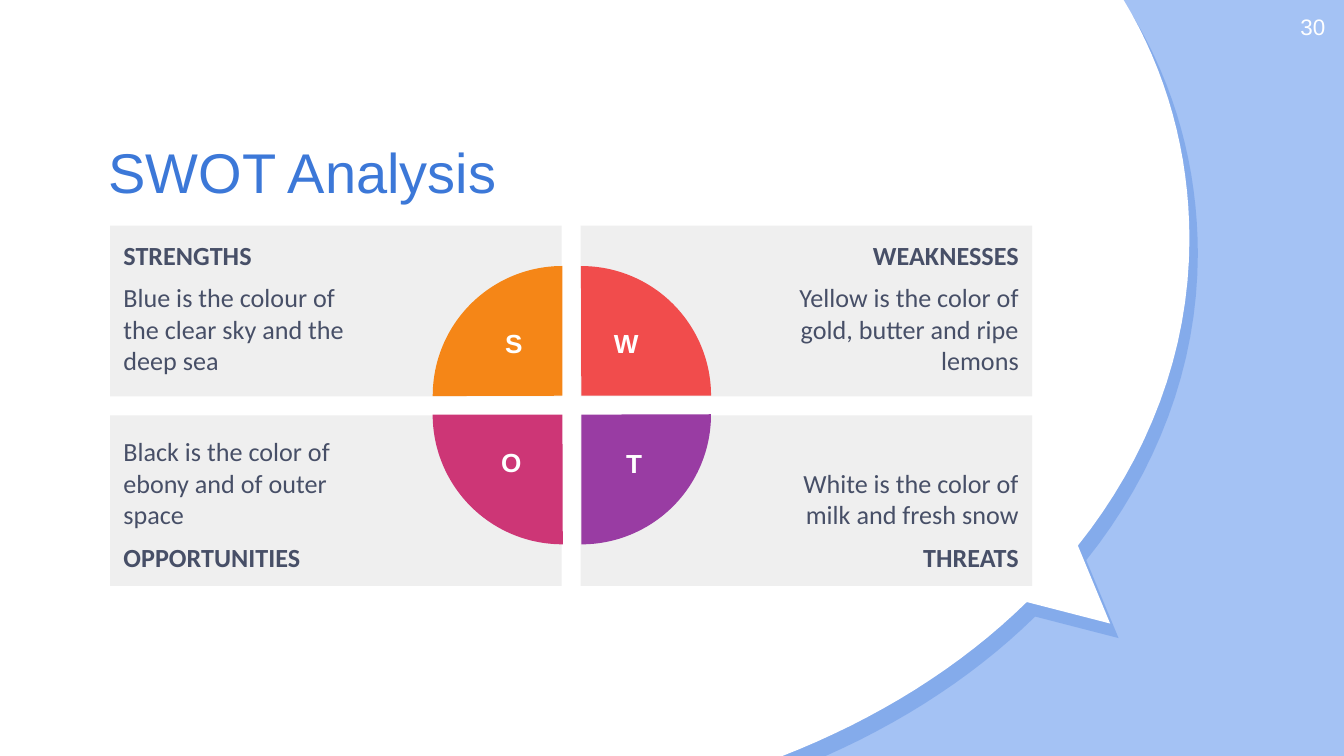
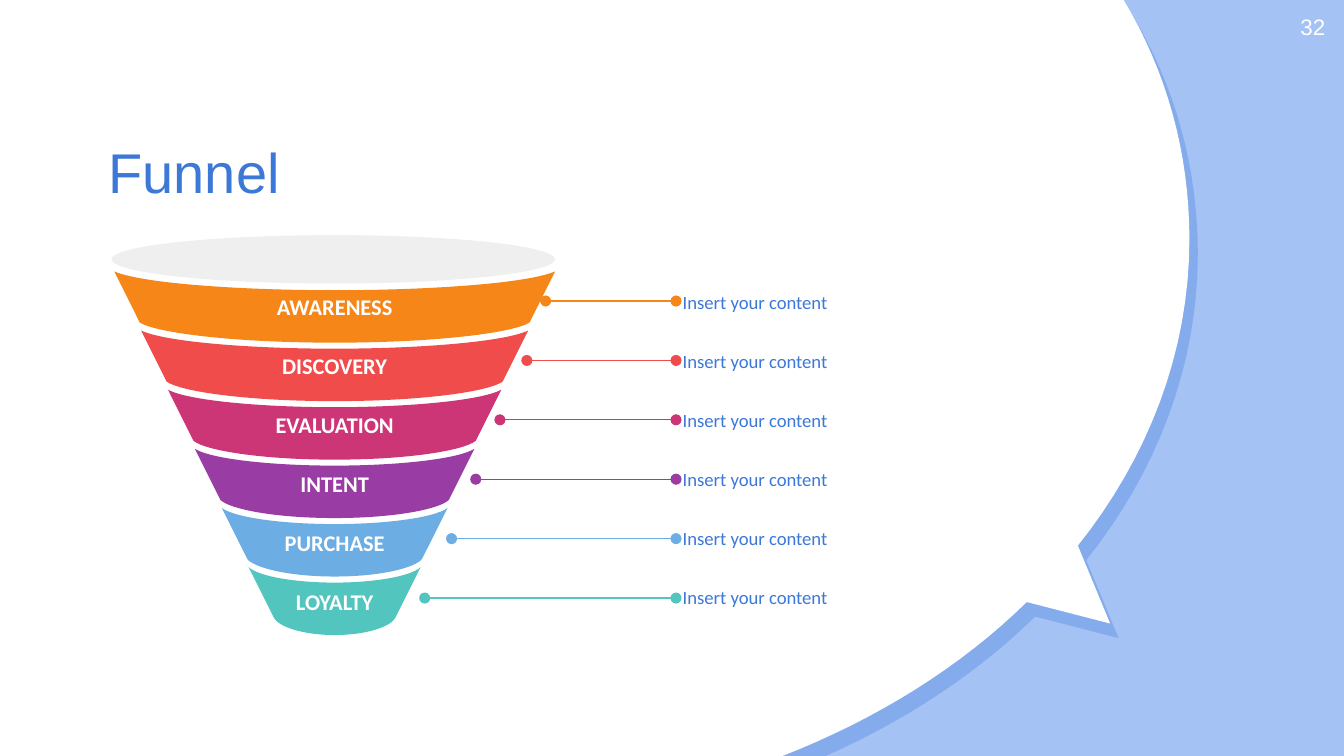
from lxml import etree
from pptx import Presentation
from pptx.dml.color import RGBColor
from pptx.enum.shapes import MSO_CONNECTOR, MSO_SHAPE
from pptx.enum.text import MSO_ANCHOR, PP_ALIGN
from pptx.oxml.ns import qn
from pptx.util import Inches, Pt

LEFT, CENTER, RIGHT = PP_ALIGN.LEFT, PP_ALIGN.CENTER, PP_ALIGN.RIGHT
TOP, MIDDLE, BOTTOM = MSO_ANCHOR.TOP, MSO_ANCHOR.MIDDLE, MSO_ANCHOR.BOTTOM
RECTANGLE, ELLIPSE, PIE = MSO_SHAPE.RECTANGLE, MSO_SHAPE.OVAL, MSO_SHAPE.PIE
STRAIGHT = MSO_CONNECTOR.STRAIGHT

COLORS = {
    "sky": "A4C2F4", "blue": "3C78D8", "white": "FFFFFF", "panel": "EFEFEF",
    "ink": "474F67", "orange": "F58617", "red": "F14C4C", "pink": "CD3676",
    "purple": "993CA3", "light blue": "6CAEE3", "teal": "52C5BF",
}
HEADING_FONT, BODY_FONT = "Arial", "Calibri"

# Content: heading, text, letter, colour, column, row, pie turn, letter box (left, top, width)
SWOT = [
    ("STRENGTHS", "Blue is the colour of the clear sky and the deep sea",
     "S", "orange", 0, 0, 0, (3.66, 2.39, 0.26)),
    ("WEAKNESSES", "Yellow is the color of gold, butter and ripe lemons",
     "W", "red", 1, 0, 90, (4.47, 2.39, 0.37)),
    ("OPPORTUNITIES", "Black is the color of ebony and of outer space",
     "O", "pink", 0, 1, 270, (3.63, 3.27, 0.32)),
    ("THREATS", "White is the color of milk and fresh snow",
     "T", "purple", 1, 1, 180, (4.56, 3.28, 0.26)),
]
# Stage, colour, start of its leader line
FUNNEL = [
    ("AWARENESS", "orange", 4.06), ("DISCOVERY", "red", 3.92),
    ("EVALUATION", "pink", 3.72), ("INTENT", "purple", 3.54),
    ("PURCHASE", "light blue", 3.36), ("LOYALTY", "teal", 3.16),
]
STAGE_NOTE = "Insert your content"

# Speech bubble: two arcs down the right side, the pointer, one arc to the bottom
BUBBLE_RIGHT_TOP = [(8.36, 0), (8.68, 0.53), (8.85, 1.14), (8.85, 1.78)]
BUBBLE_RIGHT_LOW = [(8.85, 1.78), (8.85, 2.62), (8.54, 3.41), (8.02, 4.06)]
BUBBLE_POINTER = (8.26, 4.64)
BUBBLE_BOTTOM = [(7.64, 4.48), (7.15, 4.96), (6.53, 5.35), (5.81, 5.63)]


def rgb(name):
    return RGBColor.from_string(COLORS[name])


def curve(controls, steps=16):
    """Points along a cubic Bezier curve."""
    points = []
    for step in range(steps + 1):
        t = step / steps
        weights = ((1 - t) ** 3, 3 * t * (1 - t) ** 2, 3 * t * t * (1 - t), t ** 3)
        points.append(tuple(sum(weight * point[axis] for weight, point in zip(weights, controls))
                            for axis in (0, 1)))
    return points


def paint(shape, color):
    shape.fill.solid()
    shape.fill.fore_color.rgb = rgb(color)
    shape.line.fill.background()
    shape.shadow.inherit = False
    return shape


def add_preset(shapes, kind, left, top, width, height, color):
    return paint(shapes.add_shape(kind, Inches(left), Inches(top), Inches(width), Inches(height)),
                 color)


def add_outline(shapes, points, color):
    corners = [(Inches(x), Inches(y)) for x, y in points]
    builder = shapes.build_freeform(*corners[0])
    builder.add_line_segments(corners[1:], close=True)
    return paint(builder.convert_to_shape(), color)


def bend(shape):
    """Turn every three segments of an outline into one cubic curve."""
    segments = shape._element.findall(".//" + qn("a:lnTo"))
    for first in range(0, len(segments), 3):
        arc = etree.Element(qn("a:cubicBezTo"))
        segments[first].addprevious(arc)
        for segment in segments[first:first + 3]:
            arc.append(segment[0])
            segment.getparent().remove(segment)


def write(box, text, size=14, font=BODY_FONT, color="ink", align=LEFT, anchor=TOP,
          insets=(0.1, 0.1, 0.1, 0.1), bold=False):
    """Fill a shape with one string, or with (text, bold, before, after) paragraphs."""
    frame = box.text_frame
    frame.word_wrap = True
    frame.vertical_anchor = anchor
    (frame.margin_left, frame.margin_top,
     frame.margin_right, frame.margin_bottom) = [Inches(inset) for inset in insets]
    lines = [(text, bold, 0, 0)] if isinstance(text, str) else text
    for index, (words, strong, before, after) in enumerate(lines):
        para = frame.add_paragraph() if index else frame.paragraphs[0]
        para.alignment = align
        para.space_before, para.space_after = Pt(before), Pt(after)
        span = para.add_run()
        span.text = words
        span.font.name, span.font.size, span.font.bold = font, Pt(size), strong
        span.font.color.rgb = rgb(color)


def add_text(page, text, left, top, width, height, **style):
    box = page.shapes.add_textbox(Inches(left), Inches(top), Inches(width), Inches(height))
    write(box, text, **style)


def add_bubble(page):
    points = (curve(BUBBLE_RIGHT_TOP) + curve(BUBBLE_RIGHT_LOW)[1:] + [BUBBLE_POINTER]
              + curve(BUBBLE_BOTTOM) + [(0, 5.63), (0, 0)])
    bubble = add_outline(page.shapes, points, "white")
    effects = bubble._element.spPr.find(qn("a:effectLst"))
    shadow = etree.SubElement(effects, qn("a:outerShdw"), blurRad="0", dist=str(Pt(9)),
                              dir=str(60 * 60000), algn="bl", rotWithShape="0")
    tint = etree.SubElement(shadow, qn("a:srgbClr"), val=COLORS["blue"])
    etree.SubElement(tint, qn("a:alpha"), val="30000")


def add_page(deck, title, number):
    page = deck.slides.add_slide(deck.slide_layouts[6])
    page.background.fill.solid()
    page.background.fill.fore_color.rgb = rgb("sky")
    add_bubble(page)
    add_text(page, title, 0.71, 0.81, 6.53, 0.81, size=30, font=HEADING_FONT,
             color="blue", anchor=BOTTOM)
    add_text(page, number, 9.36, 0, 0.6, 0.43, size=12, font=HEADING_FONT,
             color="white", align=RIGHT)
    return page


def add_leader(page, start, end, y, color):
    leader = page.shapes.add_connector(STRAIGHT, Inches(start), Inches(y), Inches(end), Inches(y))
    leader.line.width = Pt(0.75)
    leader.line.color.rgb = rgb(color)
    properties = leader._element.spPr
    line = properties.find(qn("a:ln"))
    for end_name in ("a:headEnd", "a:tailEnd"):
        etree.SubElement(line, qn(end_name), type="oval")
    etree.SubElement(properties, qn("a:effectLst"))


def build_swot(deck):
    page = add_page(deck, "SWOT Analysis", "30")
    width, height, gap, pie_size = 3.36, 1.27, 0.14, 1.93

    # Panels, with room kept free on the inner side for the pie
    for heading, text, _, _, column, row, _, _ in SWOT:
        panel = add_preset(page.shapes, RECTANGLE, 0.82 + column * (width + gap),
                           1.68 + row * (height + gap), width, height, "panel")
        if row:
            lines = [(text, False, 6, 0), (heading, True, 6, 6)]
        else:
            lines = [(heading, True, 0, 0), (text, False, 6, 6)]
        write(panel, lines, align=RIGHT if column else LEFT, anchor=BOTTOM if row else TOP,
              insets=(1.5, 0.1, 0.1, 0.1) if column else (0.1, 0.1, 1.5, 0.1))

    # Quarter circles, then their letters
    for _, _, _, color, column, row, turn, _ in SWOT:
        quarter = add_preset(page.shapes, PIE, 3.22 + column * gap, 1.98 + row * gap,
                             pie_size, pie_size, color)
        quarter.adjustments[0], quarter.adjustments[1] = 107.89, 162
        quarter.rotation = turn
    for _, _, letter, _, _, _, _, (left, top, letter_width) in SWOT:
        add_text(page, letter, left, top, letter_width, 0.37, font=HEADING_FONT, color="white",
                 align=CENTER, bold=True, insets=(0.1, 0.05, 0.1, 0.05))


def stage_outline(index):
    """Curve controls of a band with sagging edges, narrower at each step."""
    middle, top = 2.49, 2.02 + 0.44 * index
    half = 1.64 - 0.2 * index
    low_half, low = half - 0.19, top + 0.38
    sag, drop = 0.14 - 0.01 * index / 2, 0.15 - 0.01 * index / 2
    upper = [(0, top + sag), (0.42 * half, top + sag), (0.87 * half, top + 0.65 * sag),
             (half, top)]
    side = [(low_half, low)] * 3
    lower = [(0.92 * low_half, low + 0.5 * drop), (0.53 * low_half, low + drop), (0, low + drop)]
    right_half = upper + side + lower
    left_half = [(-x, y) for x, y in right_half[-2::-1]]
    return [(middle + x, y) for x, y in right_half + left_half]


def build_funnel(deck):
    page = add_page(deck, "Funnel", "32")

    # Stages and the rim
    funnel = page.shapes.add_group_shape()
    for index, (stage, color, _) in enumerate(FUNNEL):
        band = add_outline(funnel.shapes, stage_outline(index), color)
        bend(band)
        write(band, stage, size=12, color="white", bold=True, align=CENTER, anchor=MIDDLE,
              insets=(0.07, 0.04, 0.07, 0.04))
    add_preset(funnel.shapes, ELLIPSE, 0.83, 1.75, 3.3, 0.36, "panel")

    # Leader lines and notes
    for index, (_, color, start) in enumerate(FUNNEL):
        add_leader(page, start, 5.03, 2.24 + 2.21 * index / 5, color)
        add_text(page, STAGE_NOTE, 5.08, 2.09 + 0.44 * index, 2.55, 0.31, size=10, color="blue",
                 anchor=MIDDLE, insets=(0, 0, 0, 0))


def main():
    deck = Presentation()
    deck.slide_width = Inches(10)
    deck.slide_height = deck.slide_width * 9 // 16
    build_swot(deck)
    build_funnel(deck)
    deck.save("out.pptx")


if __name__ == "__main__":
    main()
